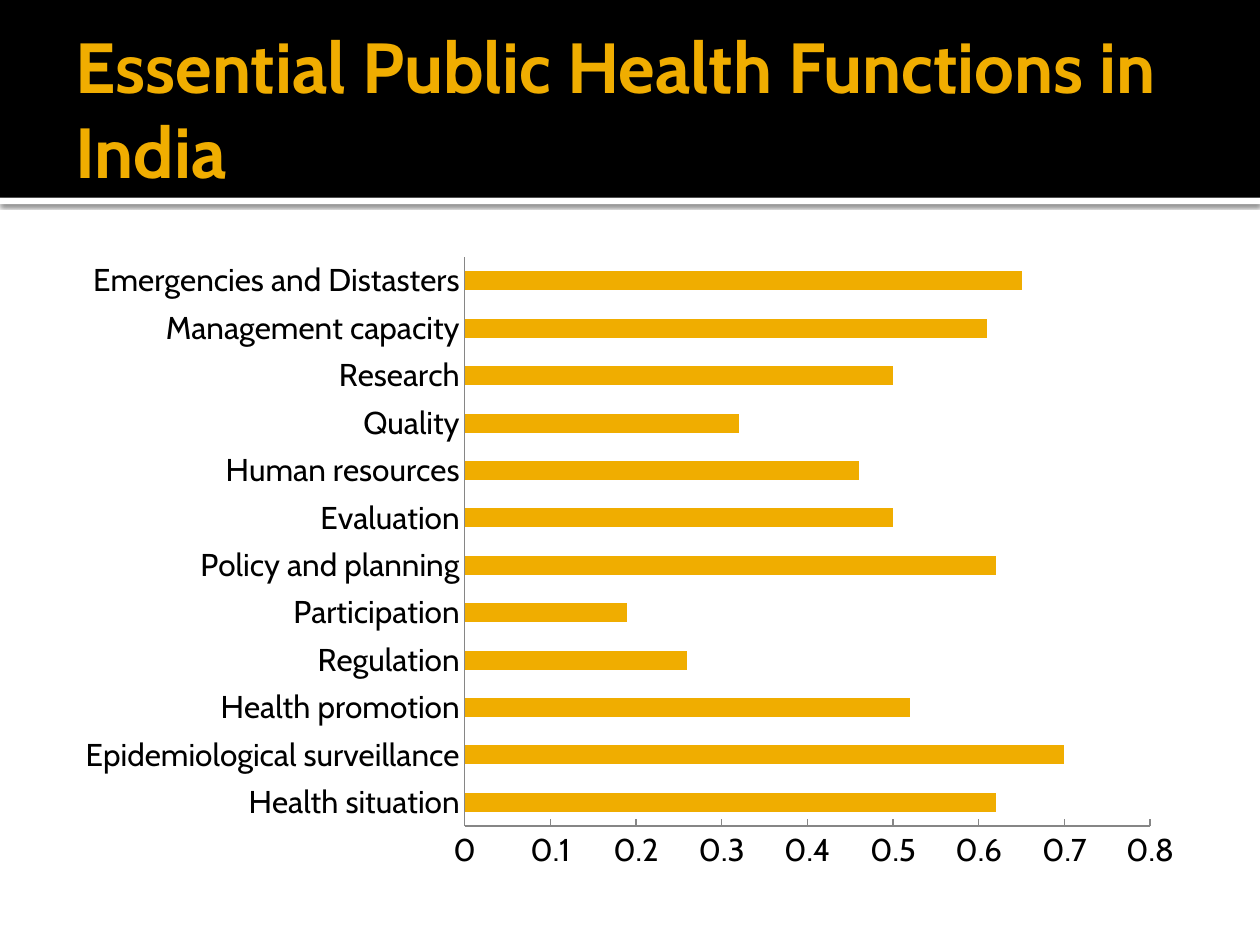
from dataclasses import dataclass

from lxml.etree import SubElement
from pptx import Presentation
from pptx.chart.data import CategoryChartData
from pptx.dml.color import RGBColor
from pptx.enum.chart import XL_CHART_TYPE as ChartType, XL_TICK_MARK as TickMark
from pptx.enum.shapes import MSO_SHAPE as Preset
from pptx.enum.text import MSO_ANCHOR as Anchor, PP_ALIGN as Align
from pptx.oxml.ns import qn
from pptx.util import Inches, Pt

BLACK = RGBColor(0x00, 0x00, 0x00)
WHITE = RGBColor(0xFF, 0xFF, 0xFF)
GOLD = RGBColor(0xF0, 0xAD, 0x00)
GREY = RGBColor(0x86, 0x86, 0x86)
FONT = "Cabin"
WIDTH, HEIGHT = 10, 7.5
MARGIN = 0.05 * WIDTH
CONTENT_WIDTH = WIDTH - 2 * MARGIN
HEADER_HEIGHT = 1.57

SCORES = {
    "Health situation": 0.62,
    "Epidemiological surveillance": 0.7,
    "Health promotion": 0.52,
    "Regulation": 0.26,
    "Participation": 0.19,
    "Policy and planning": 0.62,
    "Evaluation": 0.5,
    "Human resources": 0.46,
    "Quality": 0.32,
    "Research": 0.5,
    "Management capacity": 0.61,
    "Emergencies and Distasters": 0.65,
}


@dataclass(frozen=True)
class Band:
    """A full-width strip of the header."""

    top: float
    height: float
    color: RGBColor
    shadowed: bool = False


BANDS = (
    Band(HEADER_HEIGHT, 0.05, WHITE, shadowed=True),
    Band(0, HEADER_HEIGHT, BLACK),
)


def add_shadow(shape) -> None:
    """Give the shape a soft shadow straight below it."""
    effects = shape._element.spPr.find(qn("a:effectLst"))
    shadow = SubElement(effects, qn("a:outerShdw"), blurRad=str(Pt(2.5)),
                        dist=str(Pt(0.8)), dir="5400000", algn="tl", rotWithShape="0")
    color = SubElement(shadow, qn("a:srgbClr"), val=str(BLACK))
    SubElement(color, qn("a:alpha"), val="60000")


def add_band(page, band: Band) -> None:
    """Draw one strip of the header."""
    shape = page.shapes.add_shape(Preset.RECTANGLE, 0, Inches(band.top),
                                  Inches(WIDTH), Inches(band.height))
    shape.shadow.inherit = False
    shape.fill.solid()
    shape.fill.fore_color.rgb = band.color
    shape.line.fill.background()
    if band.shadowed:
        add_shadow(shape)


def add_title(page, text: str) -> None:
    """Write the slide title in the header."""
    box = page.shapes.add_textbox(Inches(MARGIN), Inches(0.17),
                                  Inches(CONTENT_WIDTH), Inches(1.37))
    frame = box.text_frame
    frame.word_wrap = True
    frame.vertical_anchor = Anchor.MIDDLE
    frame.margin_left = Inches(0.1)
    frame.margin_right = frame.margin_top = frame.margin_bottom = Inches(0.05)
    frame.text = text
    para = frame.paragraphs[0]
    para.alignment = Align.LEFT
    font = para.runs[0].font
    font.name, font.size, font.bold = FONT, Pt(40.5), True
    font.color.rgb = GOLD


def add_score_chart(page, scores: dict[str, float]) -> None:
    """Draw the scores as horizontal bars."""
    data = CategoryChartData()
    data.categories = list(scores)
    data.add_series("Series 1", list(scores.values()))
    frame = page.shapes.add_chart(ChartType.BAR_CLUSTERED, Inches(MARGIN), Inches(1.94),
                                  Inches(CONTENT_WIDTH), Inches(5.06), data)
    chart = frame.chart
    chart.has_legend = False
    chart.has_title = False
    chart.font.name, chart.font.size = FONT, Pt(18)
    chart.font.color.rgb = BLACK

    plot = chart.plots[0]
    plot.gap_width = 150
    plot.vary_by_categories = False
    fill = plot.series[0].format.fill
    fill.solid()
    fill.fore_color.rgb = GOLD

    ticks = ((chart.category_axis, TickMark.NONE), (chart.value_axis, TickMark.INSIDE))
    for axis, tick in ticks:
        axis.major_tick_mark = tick
        axis.minor_tick_mark = TickMark.NONE
        axis.has_major_gridlines = False
        axis.format.line.color.rgb = GREY
        axis.format.line.width = Pt(0.75)
    chart.value_axis.minimum_scale = 0
    chart.value_axis.maximum_scale = 0.8
    chart.value_axis.major_unit = 0.1


def main() -> None:
    """Build and save the slide."""
    deck = Presentation()
    deck.slide_width, deck.slide_height = Inches(WIDTH), Inches(HEIGHT)
    page = deck.slides.add_slide(deck.slide_layouts[6])
    for band in BANDS:
        add_band(page, band)
    add_title(page, "Essential Public Health Functions in India")
    add_score_chart(page, SCORES)
    deck.save("out.pptx")


if __name__ == "__main__":
    main()
